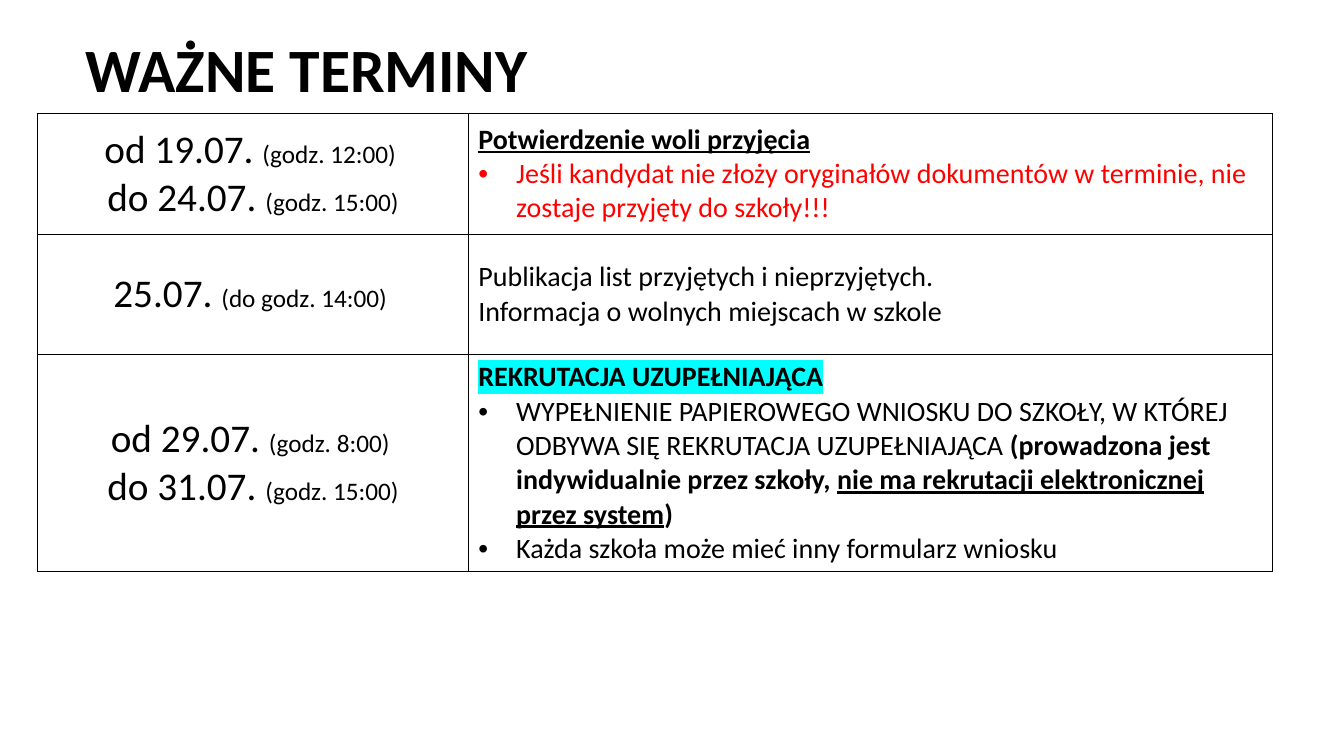
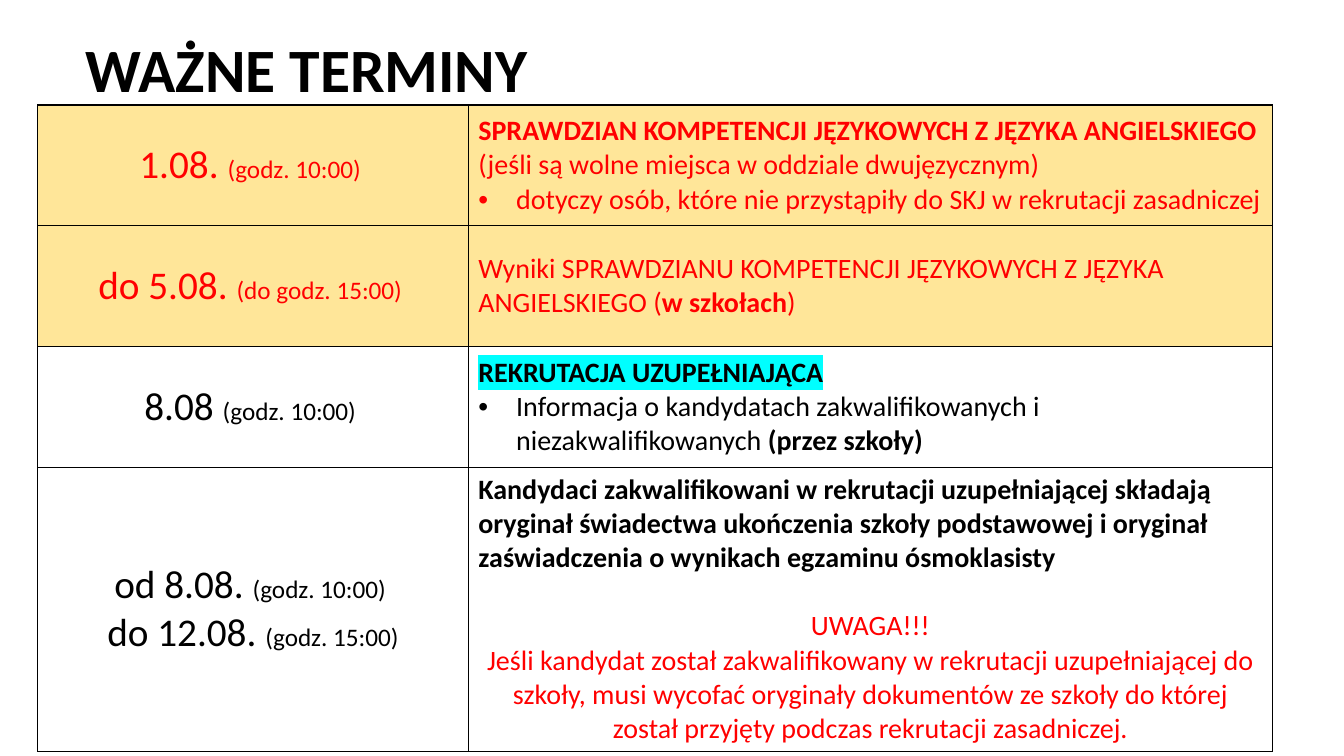
from lxml import etree
from pptx import Presentation
from pptx import util as u
from pptx.dml.color import RGBColor
from pptx.enum import text
from pptx.oxml import ns

BLACK = RGBColor(0x00, 0x00, 0x00)
RED = RGBColor(0xFF, 0x00, 0x00)
CYAN = RGBColor(0x00, 0xFF, 0xFF)
SAND = RGBColor(0xFF, 0xE6, 0x99)

PX = 9525
FONT = "Calibri"
TITLE = "WAŻNE TERMINY"
TITLE_BOX = (72, 0, 1104, 139)
COLUMNS = (410, 766)
TABLE_LEFT = 36
ROW = 115
INDENT = 36

PLAIN = {}
BOLD = {"bold": True}
HEAD = {"bold": True, "underline": True}
CENTER = {"alignment": text.PP_ALIGN.CENTER}

STAGE = (PLAIN, [("REKRUTACJA UZUPEŁNIAJĄCA", {"bold": True, "highlight": CYAN})])


def line(content, style=PLAIN, **layout):
    return layout, [(content, style)]


def bullet(*spans):
    return {"bullet": "•"}, spans


JULY = [
    {"dates": [("od 19.07. ", "(godz. 12:00) "), ("do 24.07. ", "(godz. 15:00)")],
     "details": [
         line("Potwierdzenie woli przyjęcia", HEAD),
         bullet(("Jeśli kandydat nie złoży oryginałów dokumentów w terminie, "
                 "nie zostaje przyjęty do szkoły!!!", {"color": RED}))]},
    {"dates": [("25.07. ", "(do godz. 14:00) ")],
     "details": [
         line("Publikacja list przyjętych i nieprzyjętych."),
         line("Informacja o wolnych miejscach w szkole")]},
    {"height": 206,
     "dates": [("od 29.07. ", "(godz. 8:00) "), ("do 31.07. ", "(godz. 15:00)")],
     "details": [
         STAGE,
         bullet(("WYPEŁNIENIE PAPIEROWEGO WNIOSKU DO SZKOŁY, W KTÓREJ ODBYWA SIĘ "
                 "REKRUTACJA UZUPEŁNIAJĄCA ", PLAIN),
                ("(prowadzona jest indywidualnie przez szkoły, ", BOLD),
                ("nie ma rekrutacji elektronicznej przez system", HEAD),
                (")", BOLD)),
         bullet(("Każda szkoła może mieć inny formularz wniosku", PLAIN))]},
]

AUGUST = [
    {"fill": SAND, "ink": RED,
     "dates": [("1.08. ", "(godz. 10:00) ")],
     "details": [
         line("SPRAWDZIAN KOMPETENCJI JĘZYKOWYCH Z JĘZYKA ANGIELSKIEGO", BOLD),
         line("(jeśli są wolne miejsca w oddziale dwujęzycznym)"),
         bullet(("dotyczy osób, które nie przystąpiły do SKJ w rekrutacji zasadniczej",
                 PLAIN))]},
    {"fill": SAND, "ink": RED,
     "dates": [("do 5.08. ", "(do godz. 15:00) ")],
     "details": [
         (PLAIN, [("Wyniki SPRAWDZIANU KOMPETENCJI JĘZYKOWYCH Z JĘZYKA ANGIELSKIEGO (",
                   PLAIN),
                  ("w szkołach", BOLD), (")", PLAIN)])]},
    {"dates": [("8.08 ", "(godz. 10:00) ")],
     "details": [
         STAGE,
         bullet(("Informacja o kandydatach zakwalifikowanych i niezakwalifikowanych ",
                 PLAIN),
                ("(przez szkoły)", BOLD))]},
    {"height": 271,
     "dates": [("od 8.08. ", "(godz. 10:00) "), ("do 12.08. ", "(godz. 15:00)")],
     "details": [
         line("Kandydaci zakwalifikowani w rekrutacji uzupełniającej składają oryginał "
              "świadectwa ukończenia szkoły podstawowej i oryginał zaświadczenia "
              "o wynikach egzaminu ósmoklasisty", BOLD),
         line("UWAGA!!!", {"color": RED}, space_before=u.Pt(24), **CENTER),
         line("Jeśli kandydat został zakwalifikowany w rekrutacji uzupełniającej do szkoły, "
              "musi wycofać oryginały dokumentów ze szkoły do której został przyjęty "
              "podczas rekrutacji zasadniczej.", {"color": RED}, **CENTER)]},
]


def set_all(target, values):
    for name, value in values.items():
        setattr(target, name, value)


def add_node(parent, tag, **attributes):
    return etree.SubElement(parent, ns.qn(tag), attributes)


def add_span(para, content, size, color=BLACK, highlight=None, **style):
    span = para.add_run()
    span.text = content
    set_all(span.font, {"name": FONT, "size": u.Pt(size), **style})
    span.font.color.rgb = color
    if highlight is not None:
        mark = etree.Element(ns.qn("a:highlight"))
        add_node(mark, "a:srgbClr", val=str(highlight))
        span.font._element.find(ns.qn("a:solidFill")).addnext(mark)


def add_bullet(para, sign):
    props = para._p.get_or_add_pPr()
    props.set("marL", str(INDENT * PX))
    props.set("indent", str(-INDENT * PX))
    add_node(props, "a:buFont", typeface="Arial")
    add_node(props, "a:buChar", char=sign)


def style_cell(cell, fill):
    cell.vertical_anchor = text.MSO_ANCHOR.MIDDLE
    props = cell._tc.get_or_add_tcPr()
    for side in ("a:lnL", "a:lnR", "a:lnT", "a:lnB"):
        border = add_node(props, side, w=str(u.Pt(1)))
        add_node(add_node(border, "a:solidFill"), "a:srgbClr", val=str(BLACK))
    if fill is None:
        cell.fill.background()
    else:
        cell.fill.solid()
        cell.fill.fore_color.rgb = fill


def write_dates(cell, dates, ink):
    para = cell.text_frame.paragraphs[0]
    set_all(para, CENTER)
    for index, (day, hour) in enumerate(dates):
        if index:
            para.add_line_break()
        add_span(para, day, 28, ink)
        add_span(para, hour, 18, ink)


def write_details(cell, details, ink):
    frame = cell.text_frame
    for index, (layout, spans) in enumerate(details):
        para = frame.add_paragraph() if index else frame.paragraphs[0]
        set_all(para, {name: value for name, value in layout.items() if name != "bullet"})
        if "bullet" in layout:
            add_bullet(para, layout["bullet"])
        for content, style in spans:
            add_span(para, content, 20, **{"color": ink, **style})


def add_title(page, box):
    frame = page.shapes.add_textbox(*(side * PX for side in box)).text_frame
    set_all(frame, {"word_wrap": True, "vertical_anchor": text.MSO_ANCHOR.MIDDLE})
    para = frame.paragraphs[0]
    para.line_spacing = 0.9
    add_span(para, TITLE, 44, **BOLD)


def add_schedule(page, left, top, entries):
    heights = [entry.get("height", ROW) for entry in entries]
    box = (left, top, sum(COLUMNS), sum(heights))
    table = page.shapes.add_table(
        len(entries), len(COLUMNS), *(side * PX for side in box)).table
    set_all(table, {"first_row": False, "horz_banding": False})
    for column, width in zip(table.columns, COLUMNS):
        column.width = width * PX
    for row, height, entry in zip(table.rows, heights, entries):
        row.height = height * PX
        ink = entry.get("ink", BLACK)
        for cell in row.cells:
            style_cell(cell, entry.get("fill"))
        write_dates(row.cells[0], entry["dates"], ink)
        write_details(row.cells[1], entry["details"], ink)


def add_schedule_page(deck, top, entries):
    page = deck.slides.add_slide(deck.slide_layouts[6])
    add_title(page, TITLE_BOX)
    add_schedule(page, TABLE_LEFT, top, entries)


def main():
    deck = Presentation()
    set_all(deck, {"slide_width": 1280 * PX, "slide_height": 720 * PX})
    add_schedule_page(deck, 108, JULY)
    add_schedule_page(deck, 100, AUGUST)
    deck.save("out.pptx")


if __name__ == "__main__":
    main()
